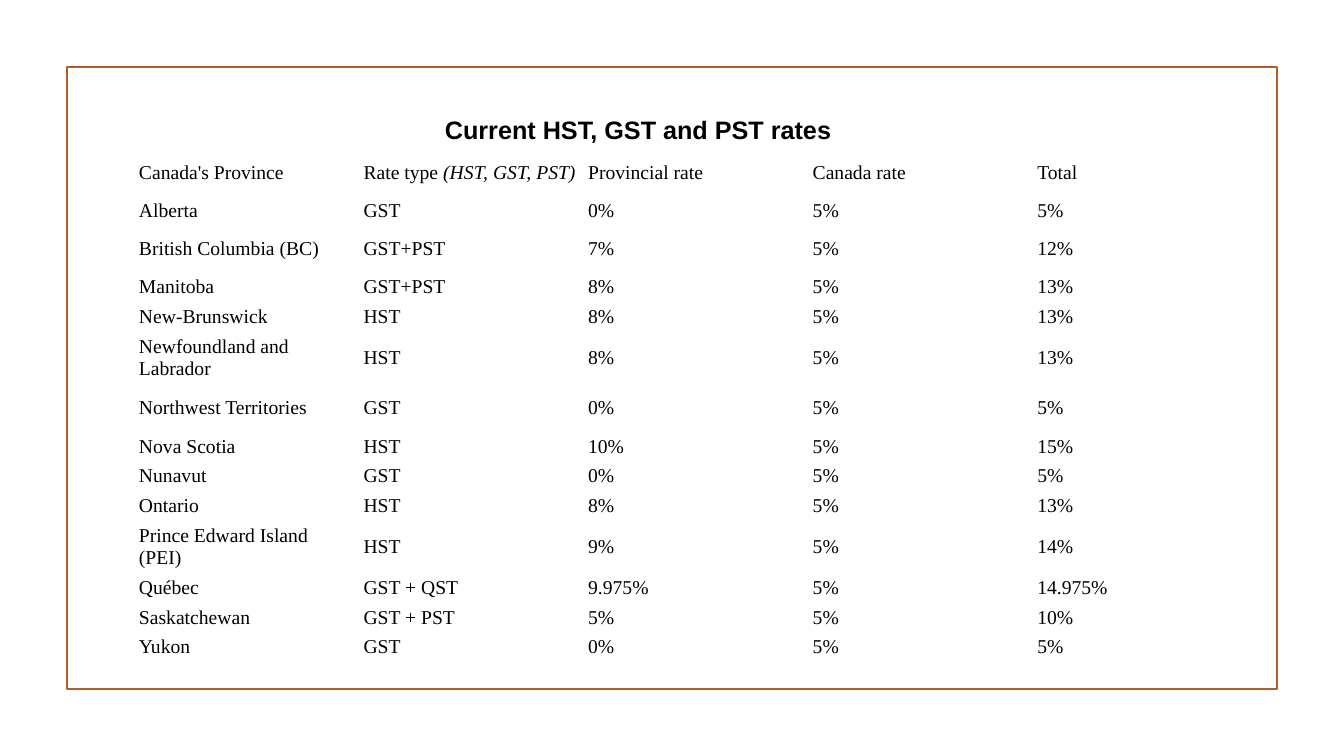
from pptx import Presentation
from pptx.dml.color import RGBColor
from pptx.enum.shapes import MSO_SHAPE
from pptx.enum.text import MSO_ANCHOR, MSO_AUTO_SIZE
from pptx.util import Pt

EMU_PER_PX = 914400 / 100.8
BLACK = RGBColor(0x00, 0x00, 0x00)
RUST = RGBColor(0xB1, 0x5E, 0x28)

HEADER = ["Canada's Province", "Rate type ", "Provincial rate", "Canada rate", "Total"]
RATE_TYPES = "(HST, GST, PST)"
CANADA_RATE = "5%"
PROVINCES = [
    ("Alberta", "GST", "0%", "5%"),
    ("British Columbia (BC)", "GST+PST", "7%", "12%"),
    ("Manitoba", "GST+PST", "8%", "13%"),
    ("New-Brunswick", "HST", "8%", "13%"),
    ("Newfoundland and Labrador", "HST", "8%", "13%"),
    ("Northwest Territories", "GST", "0%", "5%"),
    ("Nova Scotia", "HST", "10%", "15%"),
    ("Nunavut", "GST", "0%", "5%"),
    ("Ontario", "HST", "8%", "13%"),
    ("Prince Edward Island (PEI)", "HST", "9%", "14%"),
    ("Québec", "GST + QST", "9.975%", "14.975%"),
    ("Saskatchewan", "GST + PST", "5%", "10%"),
    ("Yukon", "GST", "0%", "5%"),
]
TALL_ROWS = {0, 2, 5, 6, 10}
TALL, SHORT = 47, 27


def px(n):
    return round(n * EMU_PER_PX)


def style_runs(p, font, size, bold=False):
    for r in p.runs:
        r.font.name = font
        r.font.size = Pt(size)
        r.font.bold = bold
        r.font.color.rgb = BLACK


def add_frame(s, x, y, w, h):
    sp = s.shapes.add_shape(MSO_SHAPE.RECTANGLE, px(x), px(y), px(w), px(h))
    sp.shadow.inherit = False
    sp.fill.background()
    sp.line.color.rgb = RUST
    sp.line.width = Pt(1.25)


def add_title(s, x, y, w, h):
    tf = s.shapes.add_textbox(px(x), px(y), px(w), px(h)).text_frame
    tf.word_wrap = False
    tf.auto_size = MSO_AUTO_SIZE.SHAPE_TO_FIT_TEXT
    tf.text = "Current HST, GST and PST rates"
    style_runs(tf.paragraphs[0], "Arial", 18, bold=True)


def fill_cell(cell, text, italic_text=""):
    cell.fill.background()
    cell.vertical_anchor = MSO_ANCHOR.MIDDLE
    cell.margin_left = cell.margin_right = px(5)
    cell.margin_top = cell.margin_bottom = px(3)
    p = cell.text_frame.paragraphs[0]
    p.text = text
    if italic_text:
        r = p.add_run()
        r.text = italic_text
        r.font.italic = True
    style_runs(p, "Times New Roman", 14)


def add_rates_table(s, x, y, w, h):
    rows = [HEADER] + [
        (name, kind, provincial, CANADA_RATE, total)
        for name, kind, provincial, total in PROVINCES
    ]
    table = s.shapes.add_table(
        len(rows), len(HEADER), px(x), px(y), px(w), px(h)
    ).table
    table.first_row = False
    table.horz_banding = False
    for column in table.columns:
        column.width = px(w / len(HEADER))
    for i, row in enumerate(rows):
        table.rows[i].height = px(TALL if i in TALL_ROWS else SHORT)
        for j, text in enumerate(row):
            fill_cell(table.cell(i, j), text, RATE_TYPES if (i, j) == (0, 1) else "")


def build_rates_slide(prs, x, y, w, h):
    s = prs.slides.add_slide(prs.slide_layouts[6])
    add_frame(s, x, y, w, h)
    add_title(s, x + 368, y + 42, 410, 40)
    add_rates_table(s, x + 67, y + 82, 1123, 500)


def main():
    prs = Presentation()
    prs.slide_width = px(1344)
    prs.slide_height = px(756)
    build_rates_slide(prs, 67, 67, 1210, 622)
    prs.save("out.pptx")


if __name__ == "__main__":
    main()
